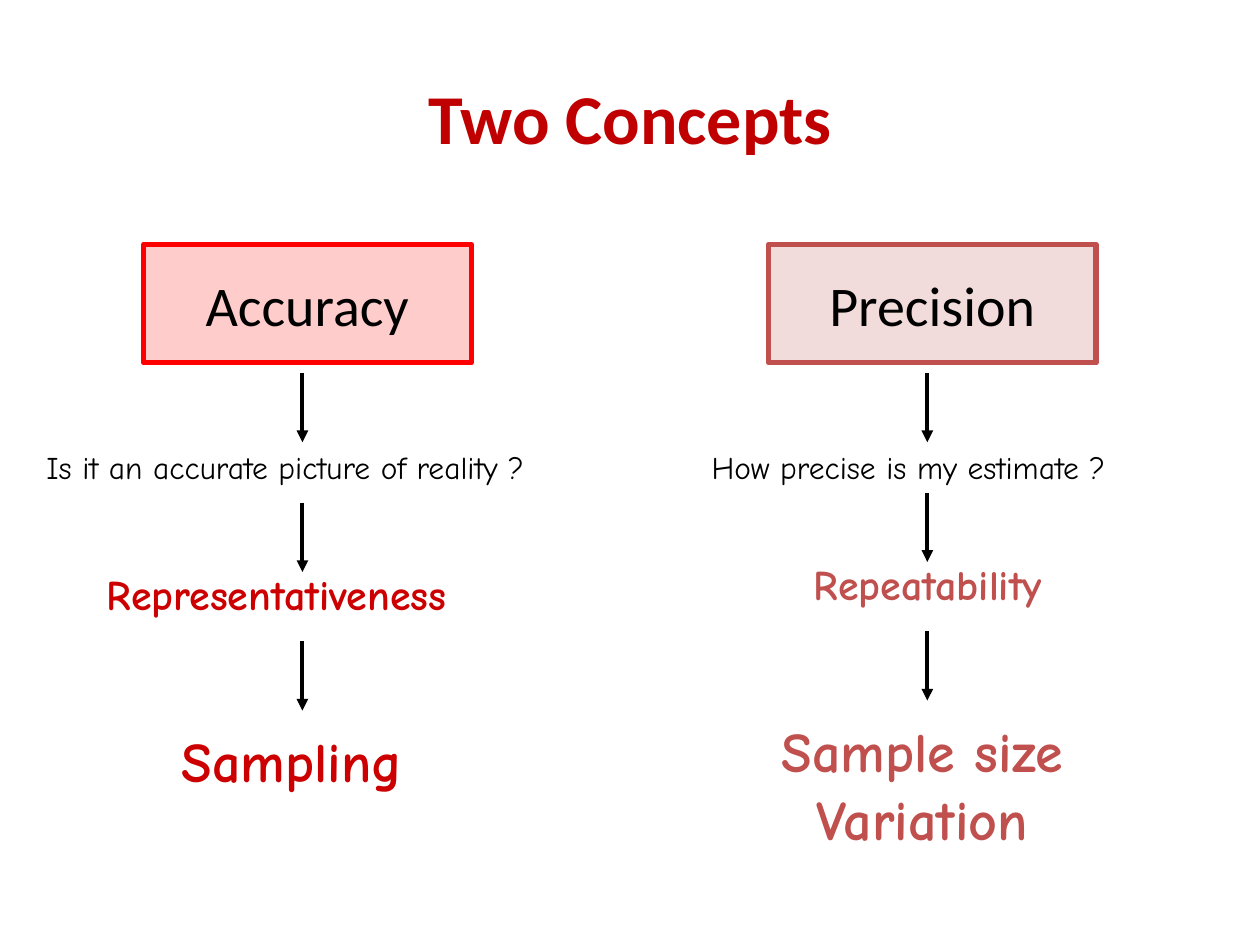
import dataclasses

import pptx
import pptx.dml.color
import pptx.enum.shapes
import pptx.enum.text
import pptx.oxml.ns
import pptx.util
from lxml import etree
from pptx.util import Inches


@dataclasses.dataclass(frozen=True)
class Theme:
    heading_font: str = "Calibri"
    body_font: str = "Comic Neue"
    black: str = "000000"
    title: str = "C00000"
    accuracy_box: str = "FF0000"
    accuracy_text: str = "CC0000"
    precision: str = "C0504D"
    title_size: int = 40
    large_size: int = 32
    medium_size: int = 24
    small_size: int = 18


theme = Theme()
rgb = pptx.dml.color.RGBColor.from_string
left = pptx.enum.text.PP_ALIGN.LEFT
center = pptx.enum.text.PP_ALIGN.CENTER
top = pptx.enum.text.MSO_ANCHOR.TOP
middle = pptx.enum.text.MSO_ANCHOR.MIDDLE


def write(box, text, size, color, font, bold=False, align=center, anchor=top, wrap=True):
    frame = box.text_frame
    frame.word_wrap = wrap
    frame.vertical_anchor = anchor
    para = frame.paragraphs[0]
    para.alignment = align
    span = para.add_run()
    span.text = text
    span.font.color.rgb = rgb(color)
    for name, value in {"size": pptx.util.Pt(size), "name": font, "bold": bold}.items():
        setattr(span.font, name, value)


def add_arrow(page, x, y):
    arrow = page.shapes.add_connector(
        pptx.enum.shapes.MSO_CONNECTOR.STRAIGHT,
        Inches(x), Inches(y), Inches(x), Inches(y + 0.55),
    )
    arrow.line.color.rgb = rgb(theme.black)
    arrow.line.width = pptx.util.Pt(2.25)
    line = arrow.line._get_or_add_ln()
    etree.SubElement(line, pptx.oxml.ns.qn("a:tailEnd"), type="triangle")
    etree.SubElement(arrow._element.spPr, pptx.oxml.ns.qn("a:effectLst"))


deck = pptx.Presentation()
deck.slide_width = Inches(10)
deck.slide_height = Inches(7.5)
page = deck.slides.add_slide(deck.slide_layouts[6])

title = page.shapes.add_textbox(Inches(0.5), Inches(0.54), Inches(9), Inches(0.77))
write(title, "Two Concepts", theme.title_size, theme.title, theme.heading_font,
      bold=True, anchor=middle)

concepts = [
    {
        "name": "Accuracy", "left": 1.14, "box_color": theme.accuracy_box,
        "arrows": [2.96, 3.99, 5.09],
        "texts": [
            ("Is it an accurate picture of reality ?", (0.27, 3.51, 4.57, 0.4),
             theme.small_size, theme.black, False, left),
            ("Representativeness", (0.75, 4.46, 3.31, 0.5),
             theme.medium_size, theme.accuracy_text, True, left),
            ("Sampling", (0.51, 5.72, 3.62, 0.63),
             theme.large_size, theme.accuracy_text, True, center),
        ],
    },
    {
        "name": "Precision", "left": 6.1, "box_color": theme.precision,
        "arrows": [2.96, 3.91, 5.01],
        "texts": [
            ("How precise is my estimate ?", (5.55, 3.51, 3.82, 0.4),
             theme.small_size, theme.black, False, left),
            ("Repeatability", (5.71, 4.38, 3.31, 0.5),
             theme.medium_size, theme.precision, True, center),
            ("Sample size Variation", (5.55, 5.64, 3.54, 1.17),
             theme.large_size, theme.precision, True, center),
        ],
    },
]

for concept in concepts:
    box = page.shapes.add_shape(
        pptx.enum.shapes.MSO_SHAPE.RECTANGLE,
        Inches(concept["left"]), Inches(1.94), Inches(2.6), Inches(0.94),
    )
    box.shadow.inherit = False
    box.fill.solid()
    box.fill.fore_color.rgb = rgb(concept["box_color"])
    fill_color = box._element.spPr.find(".//" + pptx.oxml.ns.qn("a:srgbClr"))
    etree.SubElement(fill_color, pptx.oxml.ns.qn("a:alpha"), val="20000")
    box.line.color.rgb = rgb(concept["box_color"])
    box.line.width = pptx.util.Pt(3)
    write(box, concept["name"], theme.large_size, theme.black, theme.heading_font,
          anchor=middle, wrap=False)

    for text, place, size, color, bold, align in concept["texts"]:
        label = page.shapes.add_textbox(*map(Inches, place))
        write(label, text, size, color, theme.body_font, bold, align)

    for y in concept["arrows"]:
        add_arrow(page, concept["left"] + 1.26, y)

deck.save("out.pptx")
